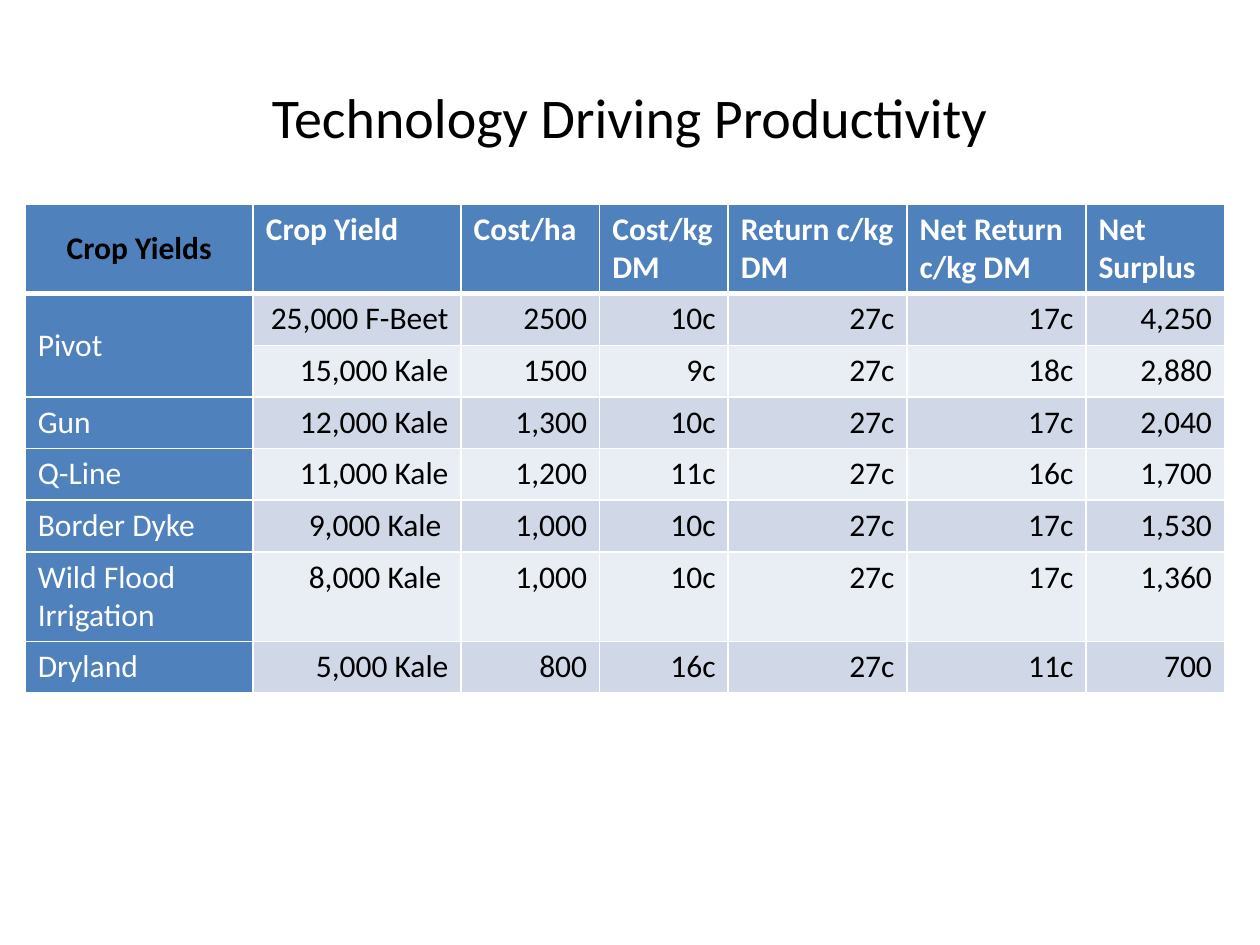
from lxml.etree import SubElement
from pptx import Presentation
from pptx.dml.color import RGBColor
from pptx.enum.text import MSO_ANCHOR as Anchor, PP_ALIGN as Align
from pptx.oxml.ns import qn
from pptx.util import Inches, Pt

TITLE = "Technology Driving Productivity"
HEADERS = ["Crop Yields", "Crop Yield", "Cost/ha", "Cost/kg\nDM",
           "Return c/kg DM", "Net Return c/kg DM", "Net Surplus"]
ROWS = [
    ["Pivot", "25,000 F-Beet", "2500", "10c", "27c", "17c", "4,250"],
    ["", "15,000 Kale", "1500", "9c", "27c", "18c", "2,880"],
    ["Gun", "12,000 Kale", "1,300", "10c", "27c", "17c", "2,040"],
    ["Q-Line", "11,000 Kale", "1,200", "11c", "27c", "16c", "1,700"],
    ["Border Dyke", "9,000 Kale ", "1,000", "10c", "27c", "17c", "1,530"],
    ["Wild Flood Irrigation", "8,000 Kale ", "1,000", "10c", "27c", "17c", "1,360"],
    ["Dryland", "5,000 Kale", "800", "16c", "27c", "11c", "700"],
]
COLUMN_WIDTHS = [1.81, 1.65, 1.1, 1.02, 1.42, 1.42, 1.1]
ROW_HEIGHT, TALL_ROW_HEIGHT = 0.41, 0.71
TALL_ROWS = {0, 6}
FONT = "Calibri"
BLACK, WHITE, BLUE = "000000", "FFFFFF", "4F81BD"
BANDS = ["D0D8E8", "E9EDF4"]


def color(value):
    return RGBColor.from_string(value)


def format_text(frame, size, text_color, align, bold=False):
    for paragraph in frame.paragraphs:
        paragraph.alignment = align
        font = paragraph.font
        font.name, font.size, font.bold = FONT, Pt(size), bold
        font.color.rgb = color(text_color)


def add_borders(cell, bottom_width):
    properties = cell._tc.get_or_add_tcPr()
    for side, width in (("L", 1), ("R", 1), ("T", 1), ("B", bottom_width)):
        line = SubElement(properties, qn(f"a:ln{side}"), w=str(Pt(width)))
        fill = SubElement(line, qn("a:solidFill"))
        SubElement(fill, qn("a:srgbClr"), val=WHITE)


def fill_cell(cell, row, column, text):
    is_header, is_label = row == 0, column == 0
    cell.text = text
    add_borders(cell, 3 if is_header else 1)
    cell.fill.solid()
    cell.fill.fore_color.rgb = color(BLUE if is_header or is_label else BANDS[(row - 1) % 2])
    if is_header and is_label:
        text_color, align = BLACK, Align.CENTER
    elif is_header or is_label:
        text_color, align = WHITE, Align.LEFT
    else:
        text_color, align = BLACK, Align.RIGHT
    format_text(cell.text_frame, 18, text_color, align, is_header)


def add_yield_table(slide):
    data = [HEADERS] + ROWS
    heights = [TALL_ROW_HEIGHT if row in TALL_ROWS else ROW_HEIGHT for row in range(len(data))]
    table = slide.shapes.add_table(
        len(data), len(HEADERS), Inches(0.2), Inches(1.62),
        Inches(sum(COLUMN_WIDTHS)), Inches(sum(heights))).table
    for column, width in zip(table.columns, COLUMN_WIDTHS):
        column.width = Inches(width)
    for row, height in zip(table.rows, heights):
        row.height = Inches(height)
    for row, values in enumerate(data):
        for column, text in enumerate(values):
            fill_cell(table.cell(row, column), row, column, text)
    table.cell(1, 0).merge(table.cell(2, 0))
    for row in (0, 1):
        table.cell(row, 0).vertical_anchor = Anchor.MIDDLE


def main():
    presentation = Presentation()
    presentation.slide_width, presentation.slide_height = Inches(10), Inches(7.5)
    slide = presentation.slides.add_slide(presentation.slide_layouts[5])
    title = slide.shapes.title
    title.left, title.top = Inches(0.5), Inches(0.3)
    title.width, title.height = Inches(9), Inches(1.25)
    title.text_frame.text = TITLE
    title.text_frame.vertical_anchor = Anchor.MIDDLE
    format_text(title.text_frame, 32, BLACK, Align.CENTER)
    add_yield_table(slide)
    presentation.save("out.pptx")


if __name__ == "__main__":
    main()
